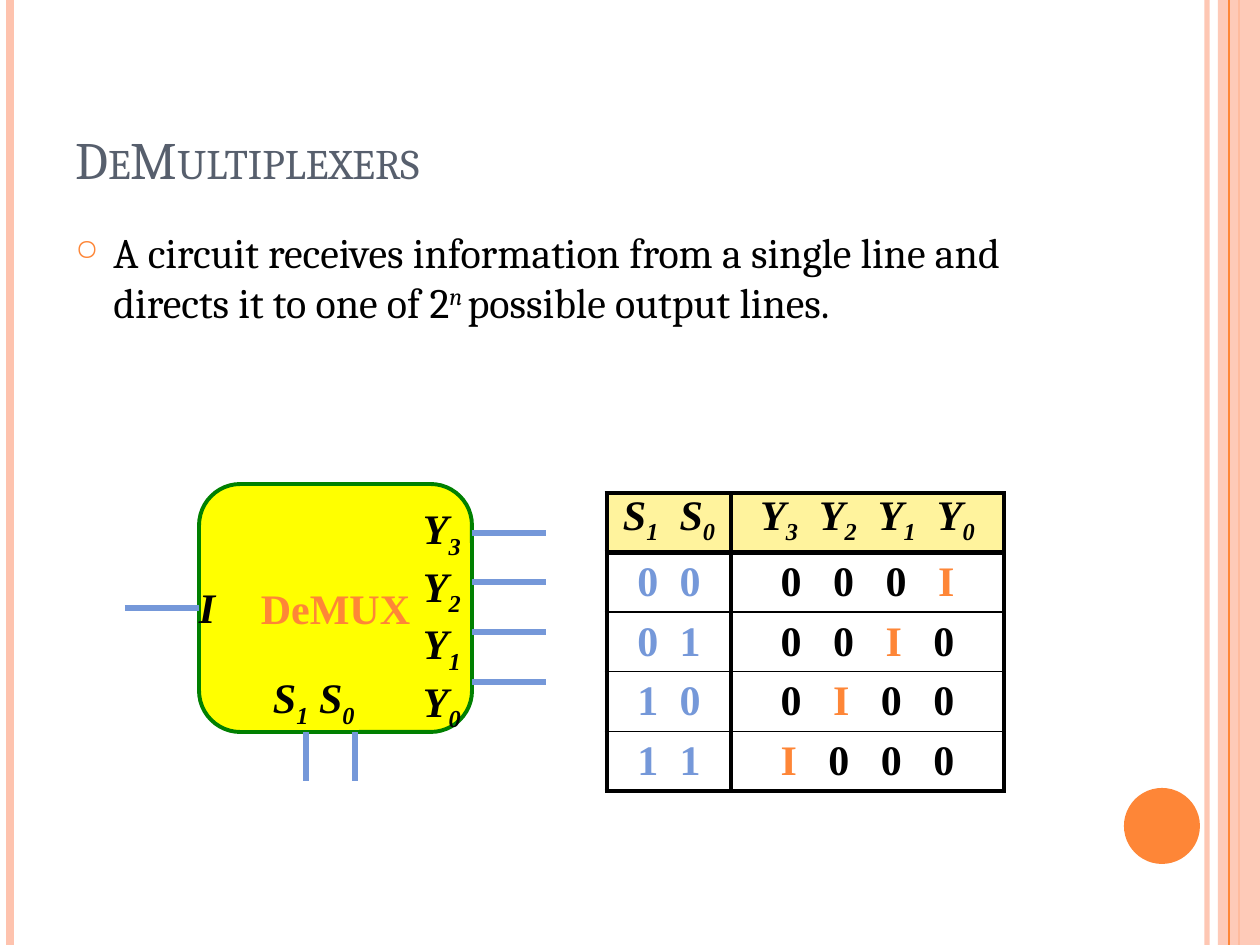
"""Build the DeMultiplexers slide: definition, block diagram and truth table."""
from lxml import etree
from pptx import Presentation
from pptx import util as u
from pptx.dml.color import RGBColor
from pptx.enum import shapes, text
from pptx.oxml.ns import qn

THEME = {
    "orange": "FE8637", "peach": "FEC3AE", "slate": "575F6D", "blue": "7598D9", "black": "000000",
    "yellow": "FFFF00", "green": "008000", "cream": "FFF39D",
    "heading": "Cambria", "diagram": "Times New Roman",
    "title_size": 30, "text_size": 24, "wire": 3, "outline": 2.25, "thin": 1, "thick": 3,
}
TITLE = "DeMultiplexers"
DEFINITION = [
    ("A circuit receives information from a single line and directs it to one of 2", {}),
    ("n ", {"italic": True, "baseline": 30000}),
    ("possible output lines.", {}),
]
BLOCK_NAME, DATA_INPUT = "DeMUX", "I"
SELECTS = ["S1", "S0"]
OUTPUTS = ["Y3", "Y2", "Y1", "Y0"]
TRUTH_ROWS = [("00", "000I"), ("01", "00I0"), ("10", "0I00"), ("11", "I000")]

PX = 914400 // 126
SLIDE_W, SLIDE_H = 1260, 945
STRIPES = [(1207, "peach", 3, 93), (10, "peach", 4.5, 100), (1239, "orange", 1.5, 100)]
BAND, BAND_ALPHA, BAND_STRIPE = (1218, 0, 42, SLIDE_H), 87, (1229, "orange", 0.75, 100)
DISC = (1124, 788, 76, 76)
TITLE_BOX, BODY_BOX = (63, 38, 1061, 158), (63, 220, 1061, 672)
BLOCK = (199, 484, 273, 248)
INPUT_BOX, OUTPUT_BOX, SELECT_BOX = (199, 582, 49, 50), (423, 503, 49, 202), (273, 672, 123, 50)
FIRST_OUTPUT, LAST_OUTPUT, WIRE_X = 533, 682, 74
SELECT_XS, WIRE_Y = (306, 355), 49
TRUTH_TABLE, TRUTH_COLUMNS = (607, 493, 397, 298), (124, 273)
INDENT = 38


def emu(*lengths):
    return [u.Emu(round(length * PX)) for length in lengths]


def rgb(name):
    return RGBColor.from_string(THEME[name])


def add_xml(parent, tag, **attributes):
    return etree.SubElement(parent, qn(tag), attributes)


def set_alpha(shape, percent):
    for colour in shape._element.iter(qn("a:srgbClr")):
        add_xml(colour, "a:alpha", val=str(percent * 1000))


def add_runs(paragraph, runs, colour="black", **base):
    for words, style in runs:
        run = paragraph.add_run()
        run.text = words
        style = {"color": colour, "size": THEME["text_size"], **base, **style}
        run.font.color.rgb = rgb(style.pop("color"))
        run.font.size = u.Pt(style.pop("size"))
        for key, value in style.items():
            if key in ("baseline", "spc", "cap"):
                run._r.get_or_add_rPr().set(key, str(value))
            else:
                setattr(run.font, key, value)


def signal_runs(signals, spaces=1):
    runs = []
    for signal in signals:
        if runs:
            runs.append((" ", {"spc": (spaces - 1) * 600}))
        runs += [(signal[0], {}), (signal[1:], {"baseline": -25000})]
    return [run for run in runs if run[0]]


def bit_runs(bits, spaces):
    runs = []
    for bit in bits:
        if runs:
            runs.append((" ", {"spc": (spaces - 1) * 600}))
        runs.append((bit, {"color": "orange"} if bit == DATA_INPUT else {}))
    return runs


def set_frame(frame, **values):
    for key, value in values.items():
        setattr(frame, key, value)
    return frame


NO_MARGINS = dict.fromkeys(("margin_left", "margin_top", "margin_right", "margin_bottom"), 0)
LABEL = {"name": THEME["diagram"], "bold": True, "italic": True}


def add_label(slide, box, lines):
    frame = set_frame(slide.shapes.add_textbox(*emu(*box)).text_frame, word_wrap=True, **NO_MARGINS)
    for index, runs in enumerate(lines):
        paragraph = frame.add_paragraph() if index else frame.paragraphs[0]
        add_runs(paragraph, runs, **LABEL)


def add_wire(slide, x1, y1, x2, y2, colour="blue", width=THEME["wire"]):
    wire = slide.shapes.add_connector(shapes.MSO_CONNECTOR.STRAIGHT, *emu(x1, y1, x2, y2))
    wire.line.color.rgb = rgb(colour)
    wire.line.width = u.Pt(width)
    add_xml(wire._element.spPr, "a:effectLst")
    return wire


def add_stripe(slide, x, colour, width, alpha):
    stripe = add_wire(slide, x, 0, x, SLIDE_H, colour, width)
    if alpha < 100:
        set_alpha(stripe, alpha)


def add_solid(slide, kind, box, colour):
    solid = slide.shapes.add_shape(kind, *emu(*box))
    solid.shadow.inherit = False
    solid.fill.solid()
    solid.fill.fore_color.rgb = rgb(colour)
    solid.line.fill.background()
    return solid


def add_decor(slide):
    for stripe in STRIPES:
        add_stripe(slide, *stripe)
    set_alpha(add_solid(slide, shapes.MSO_SHAPE.RECTANGLE, BAND, "peach"), BAND_ALPHA)
    add_stripe(slide, *BAND_STRIPE)
    add_solid(slide, shapes.MSO_SHAPE.OVAL, DISC, "orange")


def add_wording(slide):
    title = set_frame(slide.shapes.add_textbox(*emu(*TITLE_BOX)).text_frame,
                      word_wrap=True, vertical_anchor=text.MSO_ANCHOR.BOTTOM)
    add_runs(title.paragraphs[0], [(TITLE, {"cap": "small"})], "slate",
             name=THEME["heading"], size=THEME["title_size"])
    body = set_frame(slide.shapes.add_textbox(*emu(*BODY_BOX)).text_frame, word_wrap=True)
    definition = body.paragraphs[0]
    definition.space_before = u.Pt(6)
    add_runs(definition, DEFINITION, name=THEME["heading"])
    properties = definition._p.get_or_add_pPr()
    properties.set("marL", str(INDENT * PX))
    properties.set("indent", str(-INDENT * PX))
    add_xml(add_xml(properties, "a:buClr"), "a:srgbClr", val=THEME["orange"])
    add_xml(properties, "a:buSzPct", val="70000")
    add_xml(properties, "a:buChar", char="○")


def add_diagram(slide):
    left, top, width, height = BLOCK
    right, bottom = left + width, top + height
    block = add_solid(slide, shapes.MSO_SHAPE.ROUNDED_RECTANGLE, BLOCK, "yellow")
    block.line.color.rgb = rgb("green")
    block.line.width = u.Pt(THEME["outline"])
    frame = set_frame(block.text_frame, word_wrap=False,
                      vertical_anchor=text.MSO_ANCHOR.MIDDLE, **NO_MARGINS)
    frame.paragraphs[0].alignment = text.PP_ALIGN.CENTER
    add_runs(frame.paragraphs[0], [(BLOCK_NAME, {})], "orange", name=THEME["diagram"], bold=True)
    for x in SELECT_XS:
        add_wire(slide, x, bottom + WIRE_Y, x, bottom)
    for index in range(len(OUTPUTS)):
        y = FIRST_OUTPUT + (LAST_OUTPUT - FIRST_OUTPUT) * index // (len(OUTPUTS) - 1)
        add_wire(slide, right, y, right + WIRE_X, y)
    middle = top + height / 2
    add_wire(slide, left - WIRE_X, middle, left, middle).end_connect(block, 1)
    add_label(slide, INPUT_BOX, [signal_runs([DATA_INPUT])])
    add_label(slide, OUTPUT_BOX, [signal_runs([output]) for output in OUTPUTS])
    add_label(slide, SELECT_BOX, [signal_runs(SELECTS)])


def add_borders(cell, widths):
    properties = cell._tc.get_or_add_tcPr()
    for side, width in zip("LRTB", widths):
        line = add_xml(properties, f"a:ln{side}", w=str(u.Pt(width)))
        add_xml(add_xml(line, "a:solidFill"), "a:srgbClr", val=THEME["black"])


def add_truth_table(slide):
    thin, thick, outline = THEME["thin"], THEME["thick"], THEME["outline"]
    row_count = len(TRUTH_ROWS) + 1
    rules = [outline, thick] + [thin] * (row_count - 2) + [outline]
    grid = [[signal_runs(SELECTS, 2), signal_runs(OUTPUTS, 2)]]
    grid += [[bit_runs(select, 2), bit_runs(output, 3)] for select, output in TRUTH_ROWS]
    table = slide.shapes.add_table(row_count, 2, *emu(*TRUTH_TABLE)).table
    table.first_row = table.horz_banding = False
    for column, width in zip(table.columns, emu(*TRUTH_COLUMNS)):
        column.width = width
    for r, cells in enumerate(grid):
        table.rows[r].height = emu(TRUTH_TABLE[3] / row_count)[0]
        for c, runs in enumerate(cells):
            header = r == 0
            anchor = text.MSO_ANCHOR.TOP if header else text.MSO_ANCHOR.MIDDLE
            cell = set_frame(table.cell(r, c), vertical_anchor=anchor, **NO_MARGINS)
            add_borders(cell, (thick, (thick, outline)[c], rules[r], rules[r + 1]))
            if header:
                cell.fill.solid()
                cell.fill.fore_color.rgb = rgb("cream")
            else:
                cell.fill.background()
            paragraph = cell.text_frame.paragraphs[0]
            paragraph.alignment = text.PP_ALIGN.CENTER
            colour = "black" if header or c else "blue"
            add_runs(paragraph, runs, colour, **{**LABEL, "italic": header})


def main():
    deck = Presentation()
    deck.slide_width, deck.slide_height = emu(SLIDE_W, SLIDE_H)
    slide = deck.slides.add_slide(deck.slide_layouts[6])
    for add_part in (add_decor, add_wording, add_diagram, add_truth_table):
        add_part(slide)
    deck.save("out.pptx")


if __name__ == "__main__":
    main()
